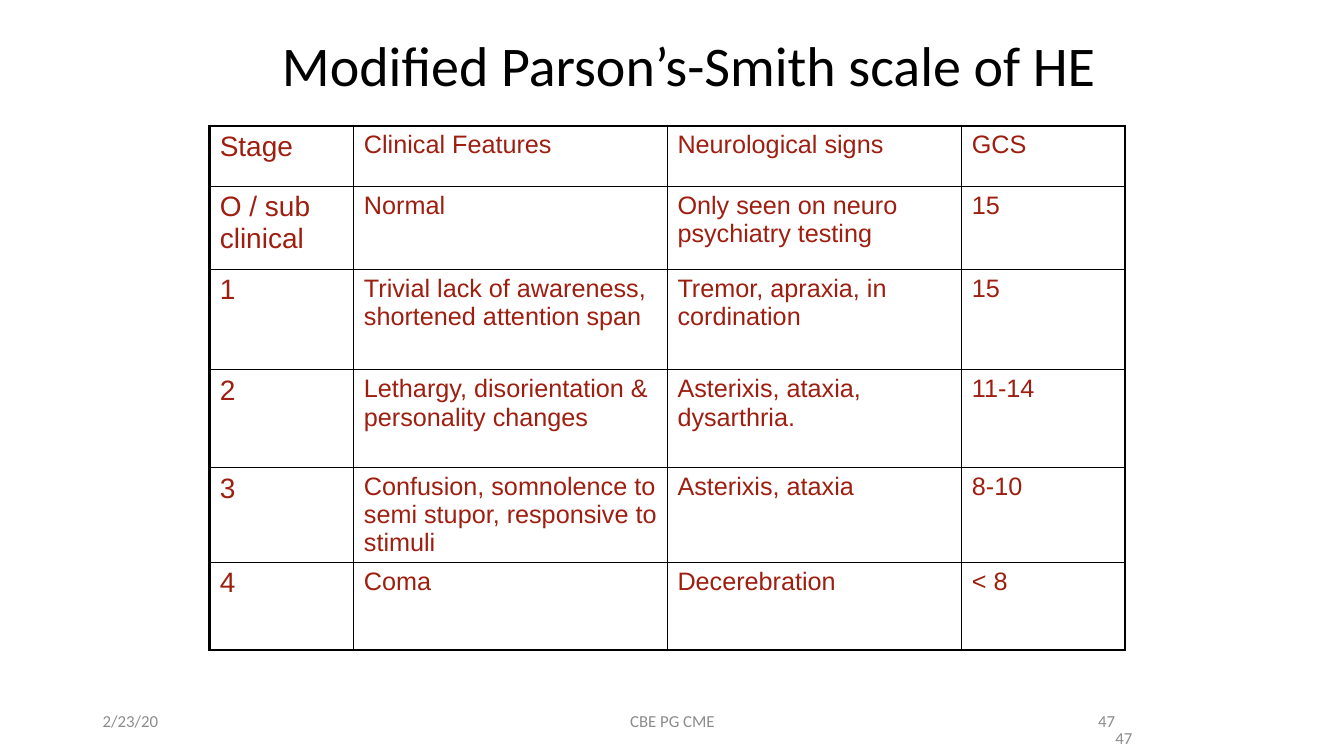
"""Builds the slide with the modified Parson's-Smith scale table."""
import pptx
import pptx.util
import pptx.dml.color
import pptx.enum.text
import pptx.oxml
import pptx.oxml.ns
from dataclasses import dataclass

Inches = pptx.util.Inches
Pt = pptx.util.Pt
Color = pptx.dml.color.RGBColor.from_string
Align = pptx.enum.text.PP_ALIGN
Anchor = pptx.enum.text.MSO_ANCHOR

TITLE = ("Modified Parson’s-Smith scale of HE", (2.58, 0.25, 8.5, 1.17))
ROWS = [
    ("Stage", "Clinical Features", "Neurological signs", "GCS"),
    ("O / sub clinical", "Normal", "Only seen on neuro psychiatry testing", "15"),
    ("1", "Trivial lack of awareness, shortened attention span",
     "Tremor, apraxia, in cordination", "15"),
    ("2", "Lethargy, disorientation & personality changes",
     "Asterixis, ataxia, dysarthria.", "11-14"),
    ("3", "Confusion, somnolence to semi stupor, responsive to stimuli",
     "Asterixis, ataxia", "8-10"),
    ("4", "Coma", "Decerebration", "< 8"),
]
SPOT = (2.08, 1.25)
WIDTHS = [1.43, 3.11, 2.92, 1.62]
HEIGHTS = [0.6, 0.82, 1, 0.97, 0.91, 0.87]
NOTES = [
    ("47", (8.83, 6.95, 2.33, 0.4), Align.RIGHT),
    ("47", (9, 7.12, 2.33, 0.4), Align.RIGHT),
    ("2/23/20", (0.92, 6.95, 3, 0.4), Align.LEFT),
    ("CBE PG CME", (4.42, 6.95, 4.5, 0.4), Align.CENTER),
]


@dataclass
class Theme:
    """Holds colours, type formats and line widths."""
    white: str = "FFFFFF"
    line: str = "000000"
    thin: float = 1
    thick: float = 2.25
    title = {"name": "Calibri", "size": 40, "color": "000000"}
    stage = {"name": "Arial", "size": 20, "color": "9E1E10"}
    body = {"name": "Arial", "size": 18, "color": "9E1E10"}
    note = {"name": "Calibri", "size": 12, "color": "8C8C8C"}


THEME = Theme()


def style(font, look):
    """Apply a dict of format values to a font."""
    values = {"name": look["name"], "size": Pt(look["size"]), "bold": False}
    for key, value in values.items():
        setattr(font, key, value)
    font.color.rgb = Color(look["color"])


def write(frame, text, look, align, anchor):
    """Put one formatted paragraph in a text frame."""
    frame.word_wrap = True
    frame.vertical_anchor = anchor
    para = frame.paragraphs[0]
    para.alignment = align
    run = para.add_run()
    run.text = text
    style(run.font, look)


def place(shape, box):
    """Move and size a shape."""
    for key, value in zip(("left", "top", "width", "height"), box):
        setattr(shape, key, Inches(value))


def edge(cell, sides):
    """Draw the four borders of a cell, thick on the outside."""
    props = cell._tc.get_or_add_tcPr()
    for spot, (side, outer) in enumerate(sides.items()):
        width = Pt(THEME.thick if outer else THEME.thin)
        props.insert(spot, pptx.oxml.parse_xml(
            f'<a:ln{side} {pptx.oxml.ns.nsdecls("a")} w="{width}">'
            f'<a:solidFill><a:srgbClr val="{THEME.line}"/></a:solidFill>'
            f'</a:ln{side}>'))


def grid(slide):
    """Add the table of stages."""
    box = (*SPOT, sum(WIDTHS), sum(HEIGHTS))
    table = slide.shapes.add_table(
        len(ROWS), len(WIDTHS), *map(Inches, box)).table
    table.first_row = table.horz_banding = False
    for col, width in zip(table.columns, WIDTHS):
        col.width = Inches(width)
    for row, height in zip(table.rows, HEIGHTS):
        row.height = Inches(height)
    for r, texts in enumerate(ROWS):
        for c, text in enumerate(texts):
            cell = table.cell(r, c)
            if c:
                cell.fill.solid()
                cell.fill.fore_color.rgb = Color(THEME.white)
            else:
                cell.fill.background()
            edge(cell, {"L": c == 0, "R": c == len(WIDTHS) - 1,
                        "T": r == 0, "B": r == len(ROWS) - 1})
            write(cell.text_frame, text, THEME.body if c else THEME.stage,
                  Align.LEFT, Anchor.TOP)


def main():
    """Build and save the slide."""
    deck = pptx.Presentation()
    deck.slide_width, deck.slide_height = Inches(13.33), Inches(7.5)
    slide = deck.slides.add_slide(deck.slide_layouts[5])
    text, box = TITLE
    head = slide.shapes.title
    place(head, box)
    write(head.text_frame, text, THEME.title, Align.CENTER, Anchor.TOP)
    grid(slide)
    for text, box, align in NOTES:
        note = slide.shapes.add_textbox(*map(Inches, box))
        write(note.text_frame, text, THEME.note, align, Anchor.MIDDLE)
    deck.save("out.pptx")


if __name__ == "__main__":
    main()
